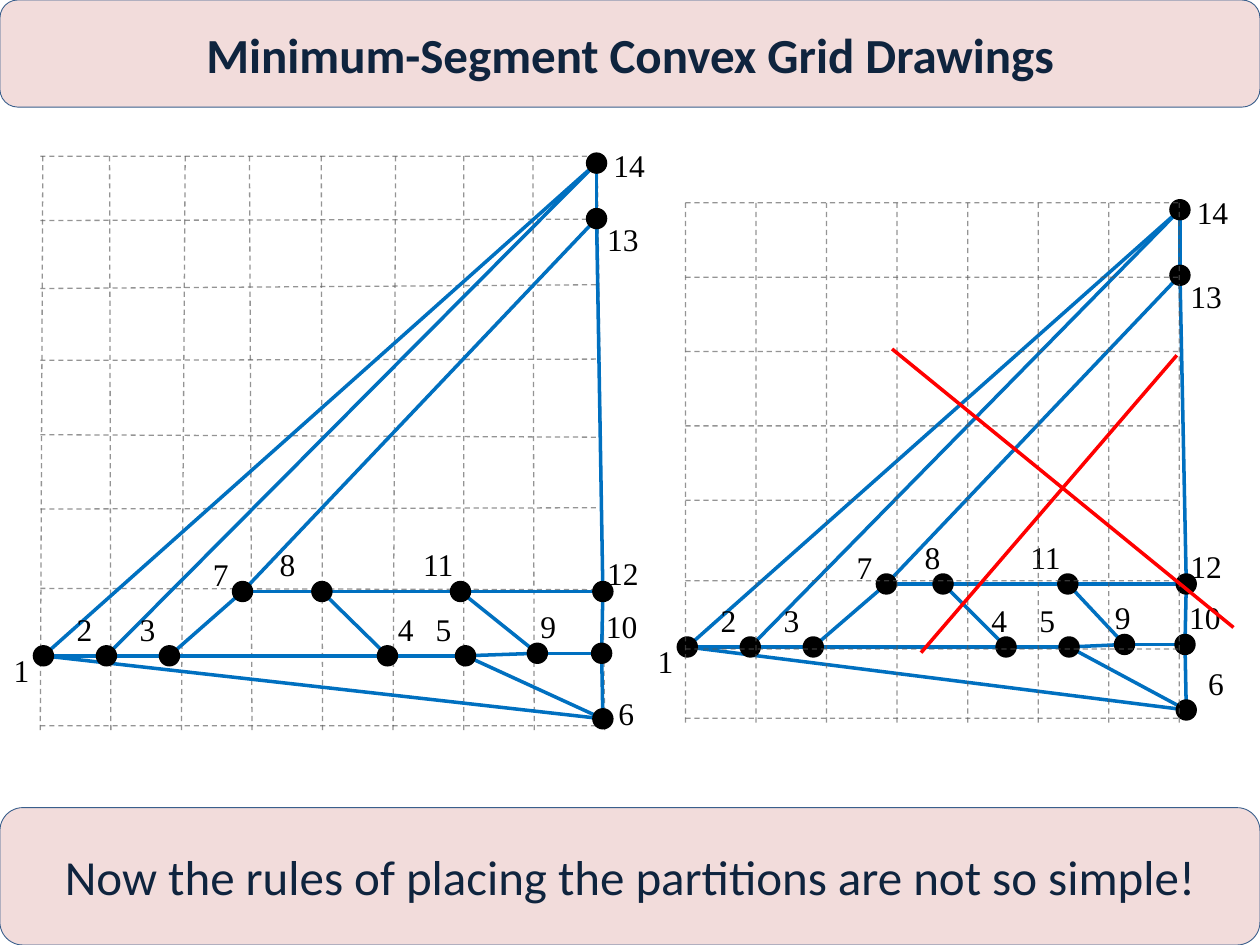
"""Builds a slide that contrasts two convex grid drawings of one graph."""
from dataclasses import dataclass

from lxml import etree
from pptx import Presentation
from pptx import util as u
from pptx.dml.color import RGBColor
from pptx.enum import dml, shapes, text
from pptx.oxml.ns import qn


@dataclass(frozen=True)
class Theme:
    """Colours, type sizes and measures of the slide."""
    panel: str = "F2DCDB"
    outline: str = "3A5F8C"
    ink: str = "0F243E"
    edge: str = "0070C0"
    grid: str = "595959"
    cross: str = "FF0000"
    vertex: str = "000000"
    banner_size: int = 28
    label_size: int = 18
    banner_font: str = "Calibri"
    label_font: str = "Times New Roman"
    unit: float = 2.54
    dot: float = 0.17


@dataclass(frozen=True)
class Grid:
    """Grid lines: column ends along top and bottom, row ends along left and right."""
    left: float
    top: float
    right: float
    bottom: float
    column_tops: list
    column_bottoms: list
    row_starts: list
    row_ends: list

    def lines(self):
        """Return the two ends of every column and row."""
        columns = [(start, self.top, end, self.bottom)
                   for start, end in zip(self.column_tops, self.column_bottoms)]
        rows = [(self.left, start, self.right, end)
                for start, end in zip(self.row_starts, self.row_ends)]
        return columns + rows


@dataclass(frozen=True)
class Drawing:
    """A placing of the graph: a height and dot positions per level, and label shifts."""
    levels: dict
    label_shifts: dict

    def dots(self):
        """Return the top left corner of each numbered dot."""
        return {number: (left, top)
                for level, (top, lefts) in self.levels.items()
                for number, left in zip(LEVELS[level], lefts)}


def spaced(start, step, count):
    """Return evenly spaced positions."""
    return [round(start + step * index, 2) for index in range(count)]


THEME = Theme()

LEVELS = {"apex": [14], "shoulder": [13], "roof": [7, 8, 11, 12],
          "sill": [9, 10], "base": [1, 2, 3, 4, 5], "foot": [6]}

PATHS = [(1, 14, 13, 12, 10, 6, 1), (14, 2), (13, 7), (3, 7, 8, 11, 12),
         (8, 4), (11, 9), (1, 5, 9, 10), (5, 6)]

USUAL_SHIFT = (-0.25, -0.33)
LABEL_SHIFTS = {1: (-0.25, 0), 7: (-0.25, -0.25), 10: (0.02, -0.33), 11: (-0.31, -0.33),
                12: (0.02, -0.26), 13: (0.07, 0.05), 14: (0.12, -0.1)}

LEFT = Drawing(
    levels={"apex": (1.21, [4.65]), "shoulder": (1.65, [4.65]),
            "roof": (4.61, [1.84, 2.47, 3.57, 4.7]), "sill": (5.1, [4.18, 4.69]),
            "base": (5.12, spaced(0.26, 0.5, 3) + [2.99, 3.61]), "foot": (5.62, [4.7])},
    label_shifts={4: (0.07, -0.33), 6: (0.11, -0.16), 8: (-0.35, -0.33), 9: (0.01, -0.33)},
)

RIGHT = Drawing(
    levels={"apex": (1.58, [9.28]), "shoulder": (2.1, [9.28]),
            "roof": (4.55, [6.95, 7.4, 8.39, 9.33]), "sill": (5.03, [8.84, 9.32]),
            "base": (5.05, spaced(5.37, 0.5, 3) + [7.9, 8.4]), "foot": (5.55, [9.33])},
    label_shifts={4: (-0.13, -0.33), 6: (0.16, -0.33), 8: (-0.16, -0.33), 9: (-0.09, -0.33)},
)

LEFT_GRID = Grid(
    left=0.32, top=1.24, right=4.73, bottom=5.81,
    column_tops=[0.34, 0.87, 1.47, 1.98, 2.55, 3.14, 3.68, 4.23, 4.74],
    column_bottoms=spaced(0.32, 0.56, 9),
    row_starts=[1.24, 1.75, 2.29, 2.86, 3.45, 4.04, 4.67, 5.22, 5.76],
    row_ends=[1.24, 1.74, 2.26, 2.85, 3.47, 4.03, 4.68, 5.19, 5.76],
)

RIGHT_COLUMNS = spaced(5.44, 0.56, 8)
RIGHT_ROWS = spaced(1.61, 0.59, 5) + [4.61, 5.15, 5.7]
RIGHT_GRID = Grid(5.44, 1.61, 9.36, 5.74,
                  RIGHT_COLUMNS, RIGHT_COLUMNS, RIGHT_ROWS, RIGHT_ROWS)

CROSS = [(7.08, 2.77, 9.79, 4.98), (7.31, 5.18, 9.34, 2.82)]


def lengths(*values):
    """Turn layout units into slide lengths."""
    return [u.Cm(value * THEME.unit) for value in values]


def set_font(paragraph, name, size, color, bold=False):
    """Set the font of a whole paragraph."""
    paragraph.font.name, paragraph.font.size = name, u.Pt(size)
    paragraph.font.bold = bold
    paragraph.font.color.rgb = RGBColor.from_string(color)


def add_line(tree, ends, color, width=2):
    """Add a straight line without a shadow."""
    line = tree.add_connector(shapes.MSO_CONNECTOR.STRAIGHT, *lengths(*ends))
    line.line.color.rgb = RGBColor.from_string(color)
    line.line.width = u.Pt(width)
    etree.SubElement(line._element.spPr, qn("a:effectLst"))
    return line


def add_shape(tree, preset, place, fill):
    """Add a filled shape without a shadow."""
    shape = tree.add_shape(preset, *lengths(*place))
    shape.shadow.inherit = False
    shape.fill.solid()
    shape.fill.fore_color.rgb = RGBColor.from_string(fill)
    return shape


def add_grid(tree, grid):
    """Add the dashed, partly transparent grid lines."""
    for ends in grid.lines():
        line = add_line(tree, ends, THEME.grid, 0.75)
        line.line.dash_style = dml.MSO_LINE.DASH
        color = line._element.spPr.find(".//" + qn("a:srgbClr"))
        etree.SubElement(color, qn("a:alpha"), val="63000")


def add_label(tree, number, left, top):
    """Add the number of a vertex."""
    width = 0.42 if number < 10 else 0.5
    frame = tree.add_textbox(*lengths(left, top, width, 0.4)).text_frame
    frame.word_wrap, frame.margin_right = True, 0
    frame.text = str(number)
    set_font(frame.paragraphs[0], THEME.label_font, THEME.label_size, THEME.vertex)


def add_drawing(tree, drawing):
    """Add the edges along every path, then the numbered vertices."""
    dots = drawing.dots()
    for stops in PATHS:
        for start, end in zip(stops, stops[1:]):
            ends = [corner + THEME.dot / 2 for corner in dots[start] + dots[end]]
            add_line(tree, ends, THEME.edge)
    shifts = {**LABEL_SHIFTS, **drawing.label_shifts}
    for number, (left, top) in dots.items():
        dot = add_shape(tree, shapes.MSO_SHAPE.OVAL,
                        (left, top, THEME.dot, THEME.dot), THEME.vertex)
        dot.line.fill.background()
        across, down = shifts.get(number, USUAL_SHIFT)
        add_label(tree, number, left + across, top + down)


def add_panel(tree, place):
    """Add a rounded, outlined banner panel."""
    panel = add_shape(tree, shapes.MSO_SHAPE.ROUNDED_RECTANGLE, place, THEME.panel)
    panel.line.color.rgb = RGBColor.from_string(THEME.outline)
    panel.line.width = u.Pt(0.5)
    return panel


def write_banner(box, wording, bold=False):
    """Write centred banner wording."""
    frame = box.text_frame
    frame.text, frame.word_wrap = wording, True
    frame.auto_size = text.MSO_AUTO_SIZE.NONE
    frame.vertical_anchor = text.MSO_ANCHOR.MIDDLE
    frame.paragraphs[0].alignment = text.PP_ALIGN.CENTER
    set_font(frame.paragraphs[0], THEME.banner_font, THEME.banner_size, THEME.ink, bold)


def add_title(page, wording):
    """Place the title placeholder on a panel."""
    place = (0, 0, 10, 0.85)
    title = page.shapes.title
    title.left, title.top, title.width, title.height = lengths(*place)
    title._element.addprevious(add_panel(page.shapes, place)._element)
    write_banner(title, wording, bold=True)


def main():
    """Build and save the slide."""
    deck = Presentation()
    deck.slide_width, deck.slide_height = lengths(10, 7.5)
    page = deck.slides.add_slide(deck.slide_layouts[5])
    add_title(page, "Minimum-Segment Convex Grid Drawings")
    add_drawing(page.shapes.add_group_shape().shapes, RIGHT)
    add_grid(page.shapes.add_group_shape().shapes, RIGHT_GRID)
    left_group = page.shapes.add_group_shape().shapes
    add_grid(left_group, LEFT_GRID)
    add_drawing(left_group, LEFT)
    for ends in CROSS:
        add_line(page.shapes, ends, THEME.cross)
    remark = add_panel(page.shapes, (0, 6.41, 10, 1.09))
    write_banner(remark, "Now the rules of placing the partitions are not so simple!")
    deck.save("out.pptx")


if __name__ == "__main__":
    main()
